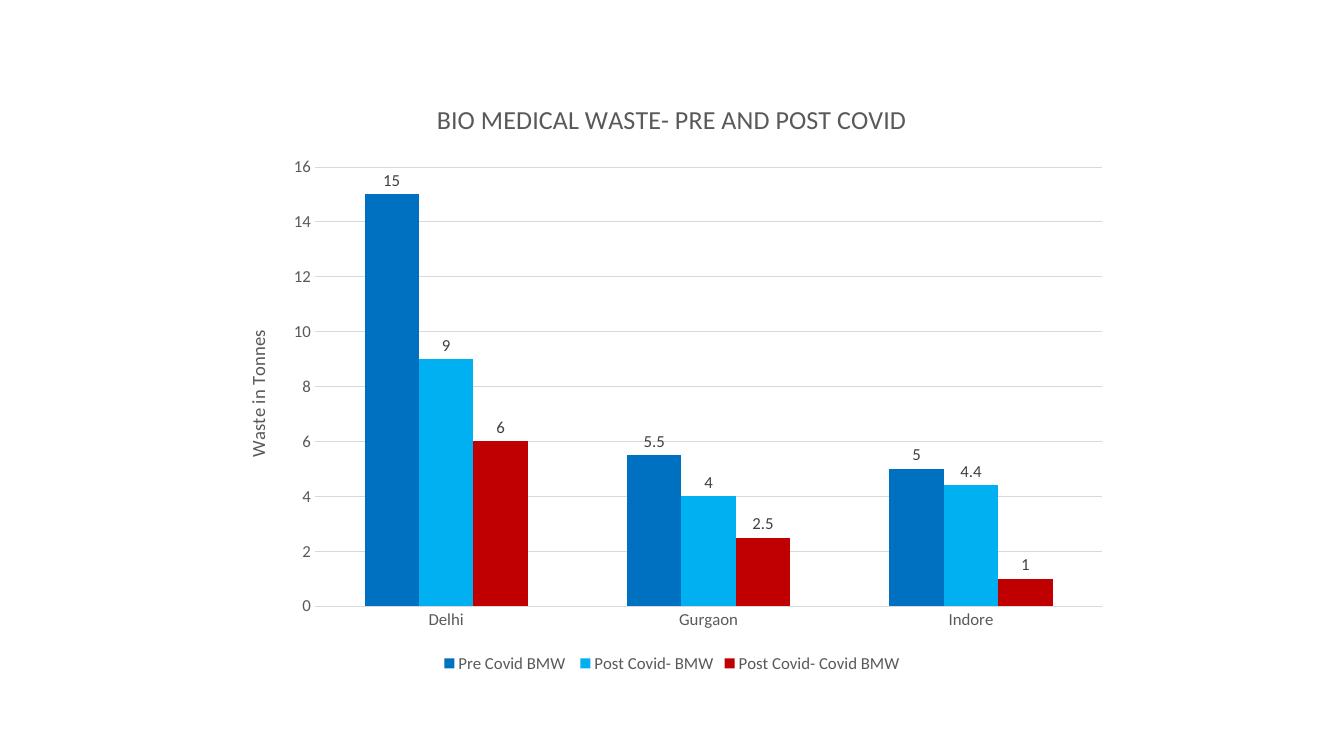
from dataclasses import dataclass

import pptx
import pptx.chart.data
import pptx.dml.color
import pptx.enum.chart
import pptx.util

FONT = "Calibri"
GREY = "595959"
LABEL_GREY = "404040"
LINE_GREY = "D9D9D9"


@dataclass(frozen=True)
class WasteSeries:
    name: str
    tonnes: tuple[float, ...]
    color: str


CITIES = ("Delhi", "Gurgaon", "Indore")
WASTE = (
    WasteSeries("Pre Covid BMW ", (15, 5.5, 5), "0070C0"),
    WasteSeries("Post Covid- BMW", (9, 4, 4.4), "00B0F0"),
    WasteSeries("Post Covid- Covid BMW", (6, 2.5, 1), "C00000"),
)


def rgb(color: str) -> pptx.dml.color.RGBColor:
    return pptx.dml.color.RGBColor.from_string(color)


def style_font(font, size: float, color: str = GREY) -> None:
    font.name = FONT
    font.size = pptx.util.Pt(size)
    font.bold = False
    font.color.rgb = rgb(color)


def style_line(line) -> None:
    line.color.rgb = rgb(LINE_GREY)
    line.width = pptx.util.Pt(0.75)


def set_title(title, text: str, size: float) -> None:
    title.text_frame.text = text
    style_font(title.text_frame.paragraphs[0].font, size)


def style_axes(chart) -> None:
    for axis in (chart.category_axis, chart.value_axis):
        axis.major_tick_mark = pptx.enum.chart.XL_TICK_MARK.NONE
        axis.minor_tick_mark = pptx.enum.chart.XL_TICK_MARK.NONE
        style_font(axis.tick_labels.font, 12)
    style_line(chart.category_axis.format.line)
    tonnes_axis = chart.value_axis
    tonnes_axis.minimum_scale = 0
    tonnes_axis.maximum_scale = 16
    tonnes_axis.major_unit = 2
    tonnes_axis.format.line.fill.background()
    style_line(tonnes_axis.major_gridlines.format.line)
    set_title(tonnes_axis.axis_title, "Waste in Tonnes", 13.3)


def style_series(plot) -> None:
    plot.gap_width = 182
    plot.overlap = 0
    plot.vary_by_categories = False
    for series, waste in zip(plot.series, WASTE):
        series.format.fill.solid()
        series.format.fill.fore_color.rgb = rgb(waste.color)
        series.invert_if_negative = False
        labels = series.data_labels
        labels.show_value = True
        labels.position = pptx.enum.chart.XL_LABEL_POSITION.OUTSIDE_END
        style_font(labels.font, 12, LABEL_GREY)


def add_waste_chart(page) -> None:
    data = pptx.chart.data.CategoryChartData()
    data.categories = CITIES
    for waste in WASTE:
        data.add_series(waste.name, waste.tonnes)
    chart = page.shapes.add_chart(
        pptx.enum.chart.XL_CHART_TYPE.COLUMN_CLUSTERED,
        pptx.util.Inches(2.22),
        pptx.util.Inches(0.79),
        pptx.util.Inches(8.89),
        pptx.util.Inches(5.93),
        data,
    ).chart
    style_font(chart.font, 10, "000000")
    chart.has_title = True
    set_title(chart.chart_title, "BIO MEDICAL WASTE- PRE AND POST COVID", 18.6)
    chart.chart_title.include_in_layout = False
    chart.has_legend = True
    chart.legend.position = pptx.enum.chart.XL_LEGEND_POSITION.BOTTOM
    chart.legend.include_in_layout = False
    style_font(chart.legend.font, 12)
    style_axes(chart)
    style_series(chart.plots[0])


def main() -> None:
    deck = pptx.Presentation()
    deck.slide_width = pptx.util.Inches(13.33)
    deck.slide_height = pptx.util.Inches(7.5)
    page = deck.slides.add_slide(deck.slide_layouts[6])
    add_waste_chart(page)
    deck.save("out.pptx")


if __name__ == "__main__":
    main()
